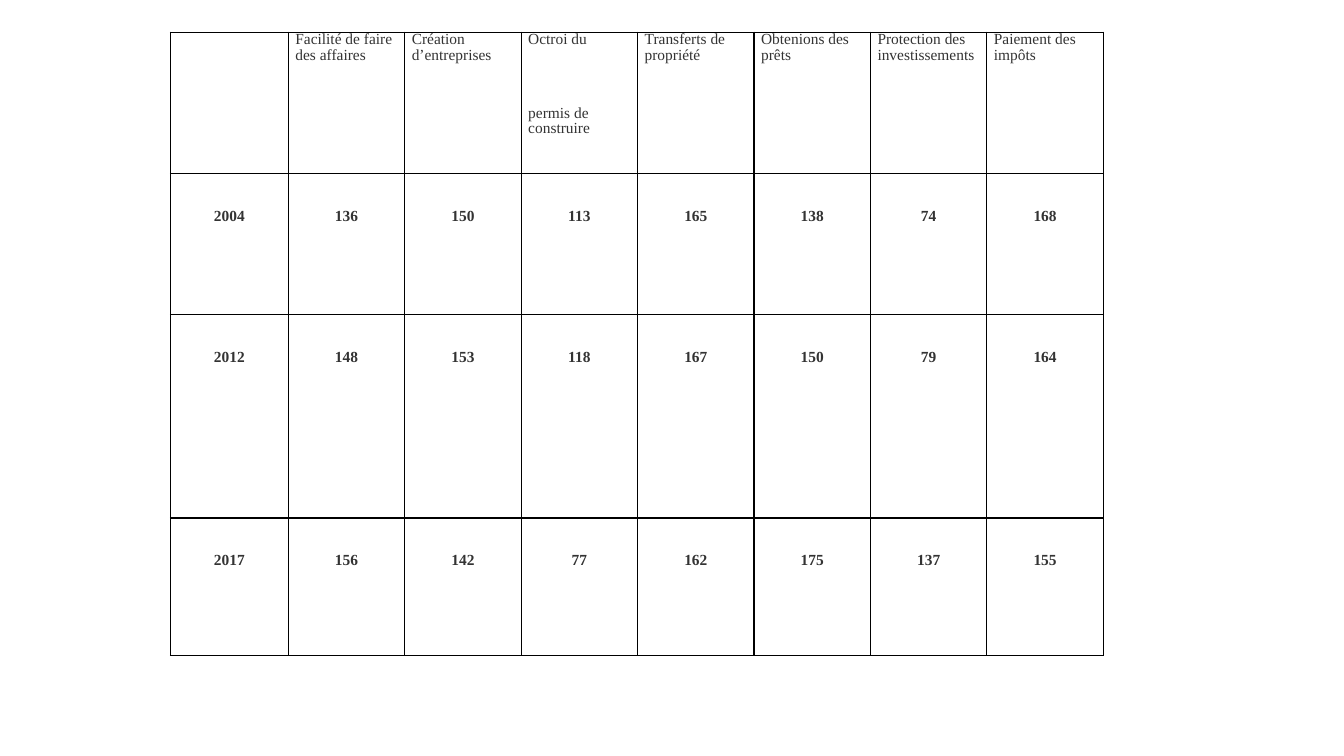
from lxml.etree import SubElement
from pptx import Presentation
from pptx.dml.color import RGBColor
from pptx.enum.text import PP_ALIGN
from pptx.oxml.ns import qn
from pptx.util import Inches, Pt

FONT = "Times New Roman"
INK, LINE = "333333", "000000"
LEFT, TOP = 1.69, 0.32
COL_WIDTHS = [1.17] + [1.155] * 7
ROW_HEIGHTS = [1.4, 1.4, 2.02, 1.36]
PADDING, VALUE_DROP = 0.07, 0.38

HEADERS = ["", "Facilité de faire des affaires", "Création d’entreprises",
           "Octroi du\npermis de construire", "Transferts de propriété",
           "Obtenions des prêts", "Protection des investissements",
           "Paiement des impôts"]
RANKS = [
    [2004, 136, 150, 113, 165, 138, 74, 168],
    [2012, 148, 153, 118, 167, 150, 79, 164],
    [2017, 156, 142, 77, 162, 175, 137, 155],
]


def rgb(color):
    return RGBColor.from_string(color)


def set_borders(cell):
    tcPr = cell._tc.get_or_add_tcPr()
    for i, side in enumerate(("lnL", "lnR", "lnT", "lnB")):
        ln = tcPr.makeelement(qn(f"a:{side}"), {"w": str(Pt(1))})
        fill = SubElement(ln, qn("a:solidFill"))
        SubElement(fill, qn("a:srgbClr"), val=LINE)
        tcPr.insert(i, ln)


def style_cell(cell, text, header):
    cell.fill.background()
    set_borders(cell)
    cell.margin_left = cell.margin_right = Inches(PADDING)
    cell.margin_top = Inches(0 if header else VALUE_DROP)
    cell.margin_bottom = 0
    tf = cell.text_frame
    tf.text = text
    for i, p in enumerate(tf.paragraphs):
        p.font.size = Pt(11)
        p.alignment = PP_ALIGN.LEFT if header else PP_ALIGN.CENTER
        p.line_spacing = 0.92 if header else 0.69
        # Later header paragraphs stand well apart from the first
        p.space_before = Pt(41 if i else 0)
        for r in p.runs:
            r.font.name = FONT
            r.font.size = Pt(11)
            r.font.bold = not header
            r.font.color.rgb = rgb(INK)


def add_ranking_table(s, rows):
    frame = s.shapes.add_table(
        len(rows), len(COL_WIDTHS), Inches(LEFT), Inches(TOP),
        Inches(sum(COL_WIDTHS)), Inches(sum(ROW_HEIGHTS)))
    table = frame.table
    table.first_row = table.horz_banding = False
    for column, width in zip(table.columns, COL_WIDTHS):
        column.width = Inches(width)
    for row, height in zip(table.rows, ROW_HEIGHTS):
        row.height = Inches(height)
    for i, values in enumerate(rows):
        for j, value in enumerate(values):
            style_cell(table.cell(i, j), str(value), header=i == 0)


def main():
    prs = Presentation()
    prs.slide_width, prs.slide_height = Inches(13.33), Inches(7.5)
    s = prs.slides.add_slide(prs.slide_layouts[6])
    # Business climate ranks by year
    add_ranking_table(s, [HEADERS] + RANKS)
    prs.save("out.pptx")


if __name__ == "__main__":
    main()
